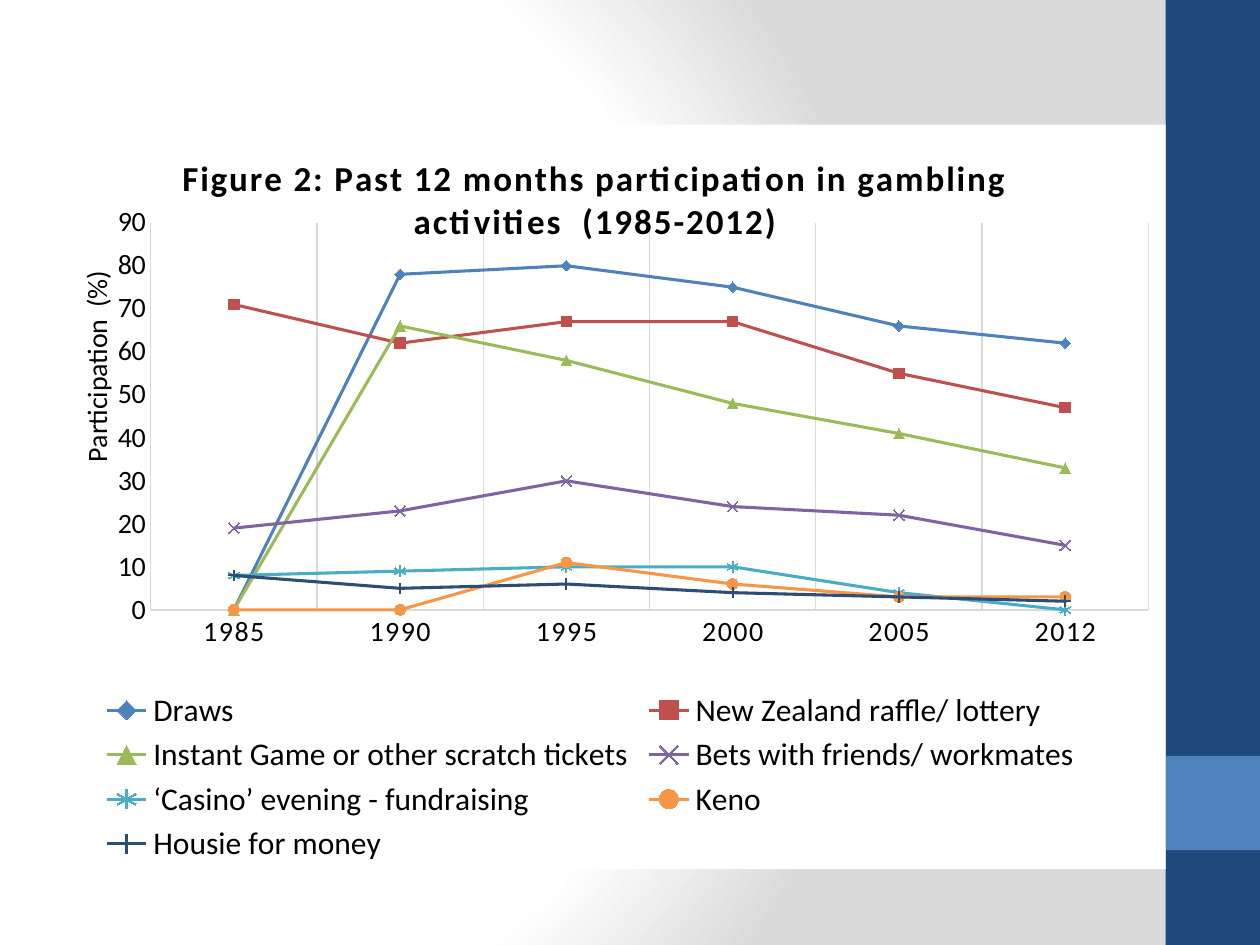
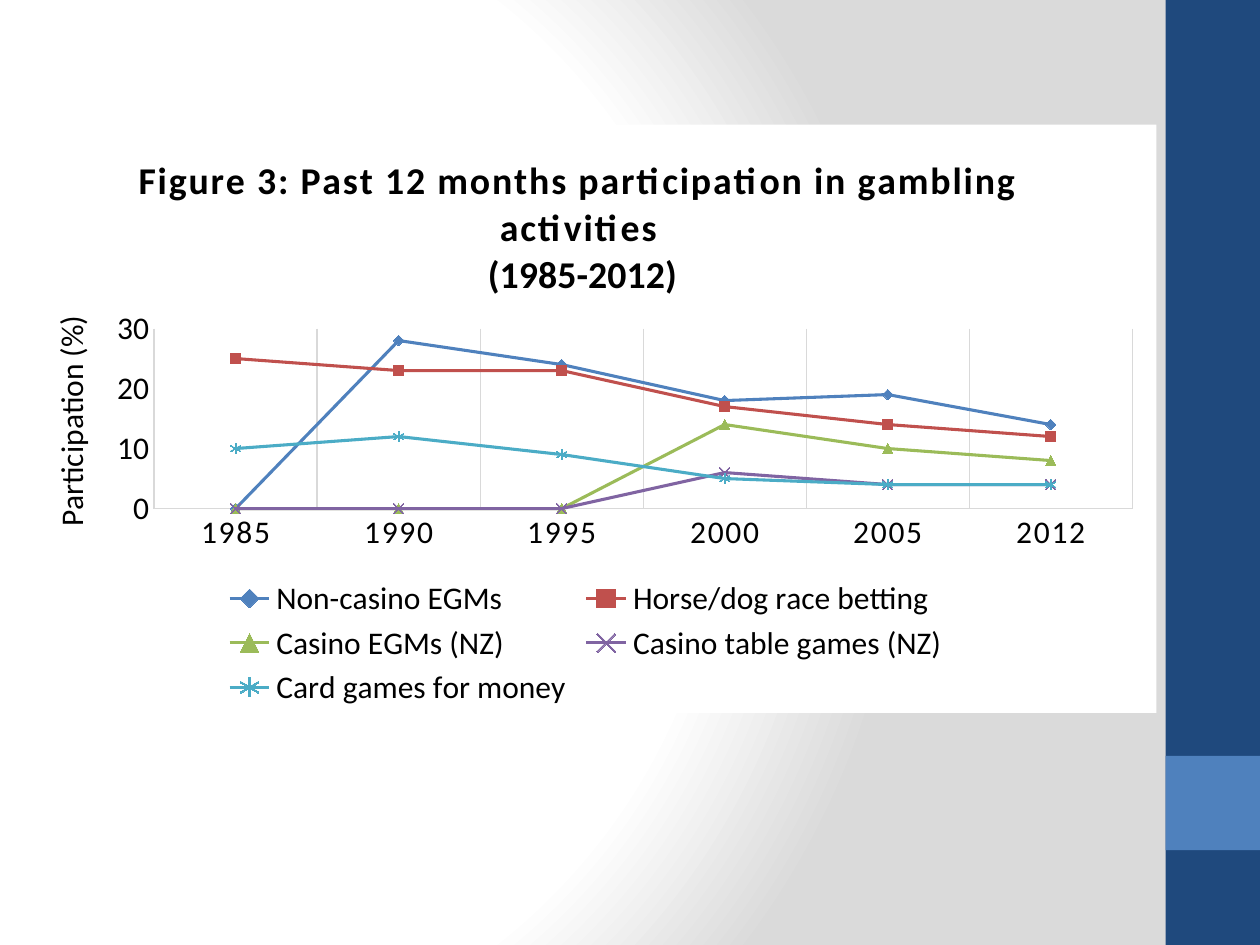
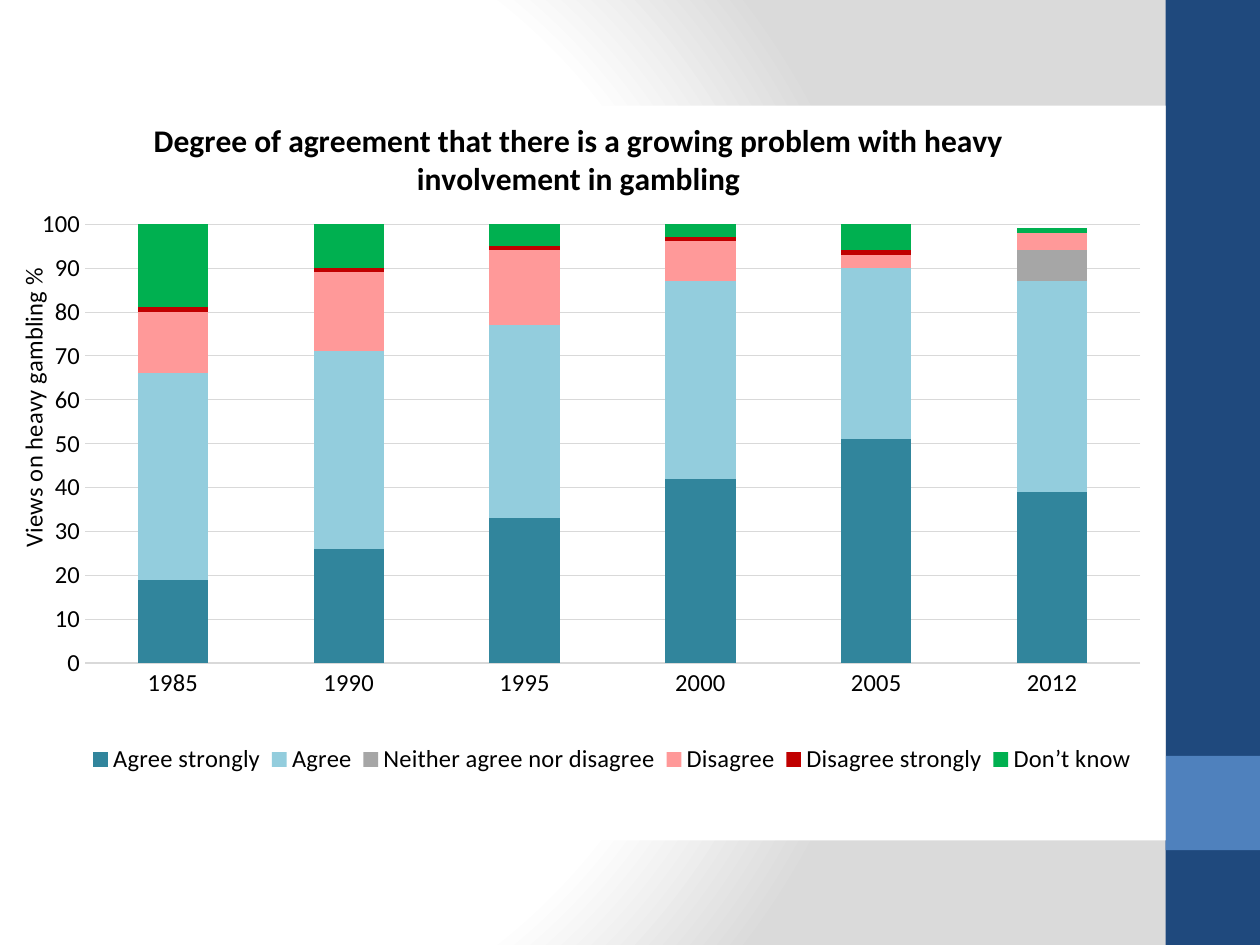
from pptx import Presentation
from pptx.chart.data import CategoryChartData
from pptx.dml.color import RGBColor
from pptx.enum.chart import XL_CHART_TYPE, XL_LEGEND_POSITION, XL_MARKER_STYLE, XL_TICK_MARK
from pptx.enum.shapes import MSO_SHAPE
from pptx.oxml import parse_xml
from pptx.oxml.ns import nsdecls, qn
from pptx.util import Cm, Pt

# Shared look
COLOURS = {
    "text": "000000", "panel": "FFFFFF", "rule": "D9D9D9", "shade": "DADADA",
    "navy": "1F497D", "blue": "4F81BD", "red": "C0504D", "green": "9BBB59",
    "purple": "8064A2", "aqua": "4BACC6", "orange": "F79646", "ink": "2C4D75",
    "teal": "31859C", "sky": "93CDDD", "grey": "A6A6A6", "pink": "FF9999",
    "crimson": "C00000", "emerald": "00B050",
}
FONT = "Calibri"
LETTER_SPACING = "100"
SLIDE_SIZE = (25.4, 19.05)
BANDS = [  # left, top, width, height in cm, colour
    (23.5, 0, 1.9, 19.05, "navy"),
    (23.5, 15.24, 1.9, 1.9, "blue"),
]
LINE_STYLES = [  # colour, marker, marker is filled
    ("blue", XL_MARKER_STYLE.DIAMOND, True),
    ("red", XL_MARKER_STYLE.SQUARE, True),
    ("green", XL_MARKER_STYLE.TRIANGLE, True),
    ("purple", XL_MARKER_STYLE.X, False),
    ("aqua", XL_MARKER_STYLE.STAR, False),
    ("orange", XL_MARKER_STYLE.CIRCLE, True),
    ("ink", XL_MARKER_STYLE.PLUS, False),
]
COLUMN_COLOURS = ["teal", "sky", "grey", "pink", "crimson", "emerald"]

# Content: box in cm; the positions of chart parts are fractions of the chart
YEARS = ["1985", "1990", "1995", "2000", "2005", "2012"]
CHARTS = [
    {
        "kind": XL_CHART_TYPE.LINE_MARKERS,
        "box": (0.3, 2.51, 23.2, 15.01),
        "title": ["Figure 2: Past 12 months participation in gambling activities  (1985-2012)"],
        "title_size": 20, "title_at": (0.14, 0.03),
        "axis_title": "Participation  (%)", "axis_title_at": (0.05, 0.19),
        "size": 16, "legend_size": 18, "maximum": 90,
        "plot_at": (0.118, 0.132, 0.867, 0.52),
        "series": {
            "Draws": (0, 78, 80, 75, 66, 62),
            "New Zealand raffle/ lottery": (71, 62, 67, 67, 55, 47),
            "Instant Game or other scratch tickets": (0, 66, 58, 48, 41, 33),
            "Bets with friends/ workmates": (19, 23, 30, 24, 22, 15),
            "‘Casino’ evening - fundraising": (8, 9, 10, 10, 4, 0),
            "Keno": (0, 0, 11, 6, 3, 3),
            "Housie for money": (8, 5, 6, 4, 3, 2),
        },
    },
    {
        "kind": XL_CHART_TYPE.LINE_MARKERS,
        "box": (0.3, 2.51, 23.01, 11.86),
        "title": ["Figure 3: Past 12 months participation in gambling activities",
                  " (1985-2012)"],
        "title_size": 21.6, "title_at": (0.105, 0.045),
        "axis_title": "Participation (%)", "axis_title_at": (0.025, 0.315),
        "size": 18, "legend_size": 18, "maximum": 30,
        "plot_at": (0.122, 0.347, 0.857, 0.306),
        "series": {
            "Non-casino EGMs": (0, 28, 24, 18, 19, 14),
            "Horse/dog race betting": (25, 23, 23, 17, 14, 12),
            "Casino EGMs (NZ)": (0, 0, 0, 14, 10, 8),
            "Casino table games (NZ)": (0, 0, 0, 6, 4, 4),
            "Card games for money": (10, 12, 9, 5, 4, 4),
        },
    },
    {
        "kind": XL_CHART_TYPE.COLUMN_STACKED,
        "box": (0, 2.13, 23.5, 14.81),
        "title": ["Degree of agreement that there is a growing problem with heavy "
                  "involvement in gambling"],
        "title_size": 18, "title_at": (0.127, 0.01),
        "axis_title": "Views on heavy gambling %", "axis_title_at": (0.01, 0.215),
        "size": 14, "legend_size": 14, "maximum": 100,
        "plot_at": (0.073, 0.161, 0.905, 0.598),
        "legend_at": (0.07, 0.865, 0.91, 0.05),
        "series": {
            "Agree strongly": (19, 26, 33, 42, 51, 39),
            "Agree": (47, 45, 44, 45, 39, 48),
            "Neither agree nor disagree": (0, 0, 0, 0, 0, 7),
            "Disagree": (14, 18, 17, 9, 3, 4),
            "Disagree strongly": (1, 1, 1, 1, 1, 0),
            "Don’t know": (20, 10, 5, 4, 7, 1),
        },
    },
]


def rgb(colour):
    return RGBColor.from_string(COLOURS[colour])


def set_values(target, values):
    for name, value in values.items():
        setattr(target, name, value)


def set_fill(fill, colour):
    fill.solid()
    fill.fore_color.rgb = rgb(colour)


def set_line(line, colour, width):
    set_fill(line.fill, colour)
    line.width = Pt(width)


def set_font(font, size, bold=False, spaced=False):
    set_values(font, {"name": FONT, "size": Pt(size), "bold": bold})
    font.color.rgb = rgb("text")
    if spaced:
        font._rPr.set("spc", LETTER_SPACING)


def place(element, index, position, inner=False):
    """Give a chart part a fixed place; index is where its layout element belongs."""
    for layout in element.findall(qn("c:layout")):
        element.remove(layout)
    parts = ['<c:layoutTarget val="inner"/>'] if inner else []
    parts += [f'<c:{side}Mode val="edge"/>' for side in "xy"]
    parts += [f'<c:{side} val="{value}"/>' for side, value in zip("xywh", position)]
    element.insert(index, parse_xml(
        f'<c:layout {nsdecls("c")}><c:manualLayout>{"".join(parts)}</c:manualLayout></c:layout>'))


def write_title(title, lines, size, position, bold=False, spaced=False):
    frame = title.text_frame
    for number, line in enumerate(lines):
        paragraph = frame.add_paragraph() if number else frame.paragraphs[0]
        run = paragraph.add_run()
        run.text = line
        set_font(run.font, size, bold, spaced and number == 0)
    place(title._element, 1, position)


def paint_background(master):
    stops = [(0, "panel"), (75000, "panel"), (100000, "shade")]
    stop_list = "".join(
        f'<a:gs pos="{position}"><a:srgbClr val="{COLOURS[colour]}"/></a:gs>'
        for position, colour in stops)
    gradient = parse_xml(
        f'<a:gradFill {nsdecls("a")} rotWithShape="1"><a:gsLst>{stop_list}</a:gsLst>'
        '<a:path path="circle"><a:fillToRect l="20000" t="50000" r="100000" b="50000"/>'
        '</a:path></a:gradFill>')
    fill = master.background.fill
    fill.solid()
    solid = master._element.find(".//" + qn("p:bgPr")).find(qn("a:solidFill"))
    solid.getparent().replace(solid, gradient)


def add_bands(slide):
    for left, top, width, height, colour in BANDS:
        shape = slide.shapes.add_shape(
            MSO_SHAPE.RECTANGLE, Cm(left), Cm(top), Cm(width), Cm(height))
        shape.shadow.inherit = False
        set_fill(shape.fill, colour)
        shape.line.fill.background()


def style_axes(chart, content, is_line):
    category_axis, value_axis = chart.category_axis, chart.value_axis
    for axis in (category_axis, value_axis):
        set_values(axis, {"major_tick_mark": XL_TICK_MARK.NONE,
                          "minor_tick_mark": XL_TICK_MARK.NONE,
                          "has_major_gridlines": (axis is category_axis) == is_line})
        set_line(axis.format.line, "rule", 0.75)
        set_font(axis.tick_labels.font, content["size"],
                 spaced=is_line and axis is category_axis)
    set_values(value_axis, {"minimum_scale": 0, "maximum_scale": content["maximum"],
                            "major_unit": 10, "has_title": True})
    if is_line:
        set_line(category_axis.major_gridlines.format.line, "rule", 0.75)
    else:
        set_line(value_axis.major_gridlines.format.line, "rule", 0.25)
        value_axis.format.line.fill.background()
    write_title(value_axis.axis_title, [content["axis_title"]],
                content["size"], content["axis_title_at"])


def style_lines(plot):
    for series, (colour, marker, filled) in zip(plot.series, LINE_STYLES):
        series.smooth = False
        set_line(series.format.line, colour, 1.75)
        set_values(series.marker, {"style": marker, "size": 6})
        marker_format = series.marker.format
        set_line(marker_format.line, colour, 0.75)
        if filled:
            set_fill(marker_format.fill, colour)
        else:
            marker_format.fill.background()


def style_columns(plot):
    set_values(plot, {"gap_width": 150, "overlap": 100})
    for series, colour in zip(plot.series, COLUMN_COLOURS):
        set_fill(series.format.fill, colour)


def add_survey_chart(slide, content):
    data = CategoryChartData()
    data.categories = YEARS
    for name, values in content["series"].items():
        data.add_series(name, values)
    box = [Cm(length) for length in content["box"]]
    chart = slide.shapes.add_chart(content["kind"], *box, data).chart
    is_line = content["kind"] == XL_CHART_TYPE.LINE_MARKERS

    # Panel, title and legend
    set_font(chart.font, content["size"])
    chart_element = chart._chartSpace.find(qn("c:chart"))
    chart_element.addnext(parse_xml(
        f'<c:spPr {nsdecls("c", "a")}><a:solidFill><a:srgbClr val="{COLOURS["panel"]}"/>'
        '</a:solidFill><a:ln><a:noFill/></a:ln></c:spPr>'))
    set_values(chart, {"has_title": True, "has_legend": True})
    write_title(chart.chart_title, content["title"], content["title_size"],
                content["title_at"], bold=True, spaced=is_line)
    set_values(chart.legend, {"position": XL_LEGEND_POSITION.BOTTOM,
                              "include_in_layout": False})
    set_font(chart.legend.font, content["legend_size"])
    if "legend_at" in content:
        place(chart.legend._element, 1, content["legend_at"])

    # Plot
    place(chart_element.find(qn("c:plotArea")), 0, content["plot_at"], inner=True)
    style_axes(chart, content, is_line)
    plot = chart.plots[0]
    plot.vary_by_categories = False
    if is_line:
        style_lines(plot)
    else:
        style_columns(plot)


def main():
    presentation = Presentation()
    width, height = SLIDE_SIZE
    set_values(presentation, {"slide_width": Cm(width), "slide_height": Cm(height)})
    paint_background(presentation.slide_master)
    for content in CHARTS:
        slide = presentation.slides.add_slide(presentation.slide_layouts[6])
        add_bands(slide)
        add_survey_chart(slide, content)
    presentation.save("out.pptx")


if __name__ == "__main__":
    main()
